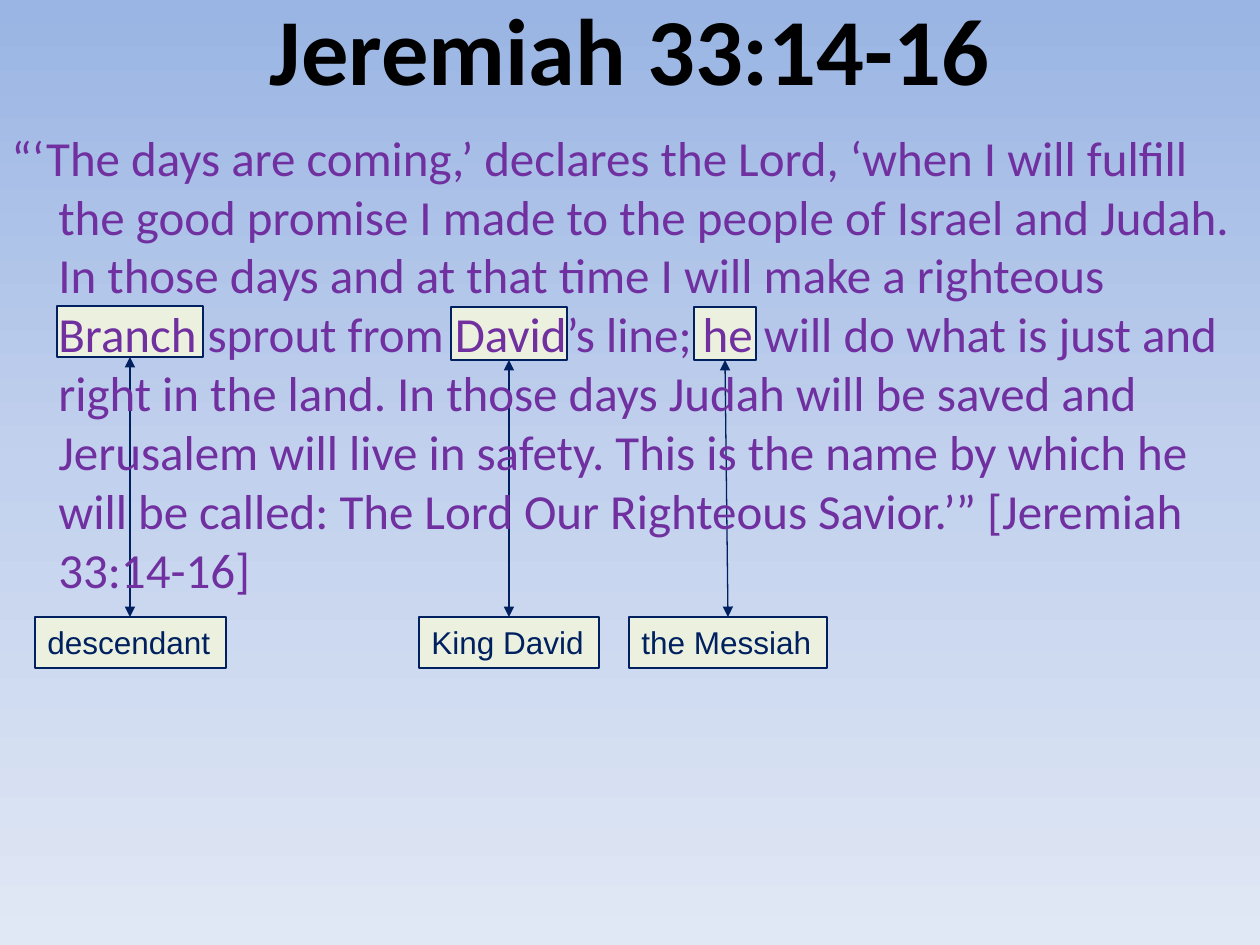
from copy import deepcopy

from lxml import etree
from pptx import Presentation
from pptx import util as u
from pptx.dml.color import RGBColor
from pptx.enum import shapes, text
from pptx.oxml.ns import qn

SCALE = 914400 / 126
NAVY = RGBColor(0x00, 0x20, 0x60)
CREAM = RGBColor(0xEB, 0xF1, 0xDE)
PURPLE = RGBColor(0x70, 0x30, 0xA0)
BLACK = RGBColor(0, 0, 0)
SKY = [RGBColor(0x9A, 0xB5, 0xE4), RGBColor(0xC2, 0xD1, 0xED), RGBColor(0xE1, 0xE8, 0xF5)]

TITLE = {"name": "Calibri", "size": u.Pt(54), "bold": True}
VERSE = {"name": "Calibri", "size": u.Pt(28)}
LABEL = {"name": "Arial", "size": u.Pt(18)}

PASSAGE = (
    "“‘The days are coming,’ declares the Lord, ‘when I will fulfill the good promise "
    "I made to the people of Israel and Judah. In those days and at that time I will make "
    "a righteous Branch sprout from David’s line; he will do what is just and right in the "
    "land. In those days Judah will be saved and Jerusalem will live in safety. This is the "
    "name by which he will be called: The Lord Our Righteous Savior.’” [Jeremiah 33:14-16]"
)
NOTES = [
    ("the Messiah", (694, 307, 62, 53), (629, 617, 198, 51)),
    ("King David", (451, 307, 116, 53), (419, 617, 180, 51)),
    ("descendant", (57, 306, 146, 51), (35, 617, 191, 51)),
]


def px(*vals):
    """Turn pixel lengths into EMU."""
    return [u.Emu(round(v * SCALE)) for v in vals]


def style(obj, form):
    """Set each attribute named in a dict."""
    for key, val in form.items():
        setattr(obj, key, val)


def write(shape, words, font, color, **form):
    """Put one styled paragraph in a shape and return it."""
    style(shape.text_frame, form)
    para = shape.text_frame.paragraphs[0]
    run = para.add_run()
    run.text = words
    style(run.font, font)
    run.font.color.rgb = color
    return para


def paint(slide):
    """Fill the background with the three-stop sky gradient."""
    fill = slide.background.fill
    fill.gradient()
    fill.gradient_angle = 270
    stops = slide.element.find(".//" + qn("a:gsLst"))
    stops.insert(1, deepcopy(stops[0]))
    for stop, color, pos in zip(fill.gradient_stops, SKY, (0, 0.5, 1)):
        stop.color.rgb = color
        stop.position = pos


def panel(group, box):
    """Draw a cream box with a thin navy edge."""
    shape = group.shapes.add_shape(shapes.MSO_SHAPE.RECTANGLE, *px(*box))
    shape.shadow.inherit = False
    shape.fill.solid()
    shape.fill.fore_color.rgb = CREAM
    shape.line.color.rgb = NAVY
    shape.line.width = u.Pt(0.75)
    return shape


def arrow(group, start, end):
    """Draw a thin navy line with a triangle at both ends."""
    line = group.shapes.add_connector(shapes.MSO_CONNECTOR.STRAIGHT, *px(*start, *end))
    line.line.color.rgb = NAVY
    line.line.width = u.Pt(0.75)
    for tag in ("a:headEnd", "a:tailEnd"):
        etree.SubElement(line.line._ln, qn(tag), type="triangle")
    etree.SubElement(line._element.spPr, qn("a:effectLst"))


def note(slide, words, mark, box):
    """Link a marked word of the passage to its label below."""
    group = slide.shapes.add_group_shape()
    panel(group, mark)
    label = panel(group, box)
    para = write(label, words, LABEL, NAVY, word_wrap=False,
                 auto_size=text.MSO_AUTO_SIZE.SHAPE_TO_FIT_TEXT,
                 vertical_anchor=text.MSO_ANCHOR.TOP)
    para.alignment = text.PP_ALIGN.LEFT
    start = (mark[0] + mark[2] // 2, mark[1] + mark[3])
    arrow(group, start, (box[0] + box[2] // 2, box[1]))


def title(slide, box):
    """Write the centred heading."""
    shape = slide.shapes.add_textbox(*px(*box))
    para = write(shape, "Jeremiah 33:14-16", TITLE, BLACK, word_wrap=True,
                 vertical_anchor=text.MSO_ANCHOR.MIDDLE)
    para.alignment = text.PP_ALIGN.CENTER


def verse(slide, box):
    """Write the passage with a hanging indent."""
    shape = slide.shapes.add_textbox(*px(*box))
    para = write(shape, PASSAGE, VERSE, PURPLE, word_wrap=True)
    hang = px(47)[0]
    props = para._p.get_or_add_pPr()
    props.set("marL", str(hang))
    props.set("indent", str(-hang))


def main():
    """Build the slide and save it."""
    deck = Presentation()
    deck.slide_width, deck.slide_height = px(1260, 945)
    slide = deck.slides.add_slide(deck.slide_layouts[6])
    paint(slide)
    for words, mark, box in NOTES:
        note(slide, words, mark, box)
    title(slide, (0, 0, 1260, 95))
    verse(slide, (-1, 121, 1260, 445))
    deck.save("out.pptx")


if __name__ == "__main__":
    main()
